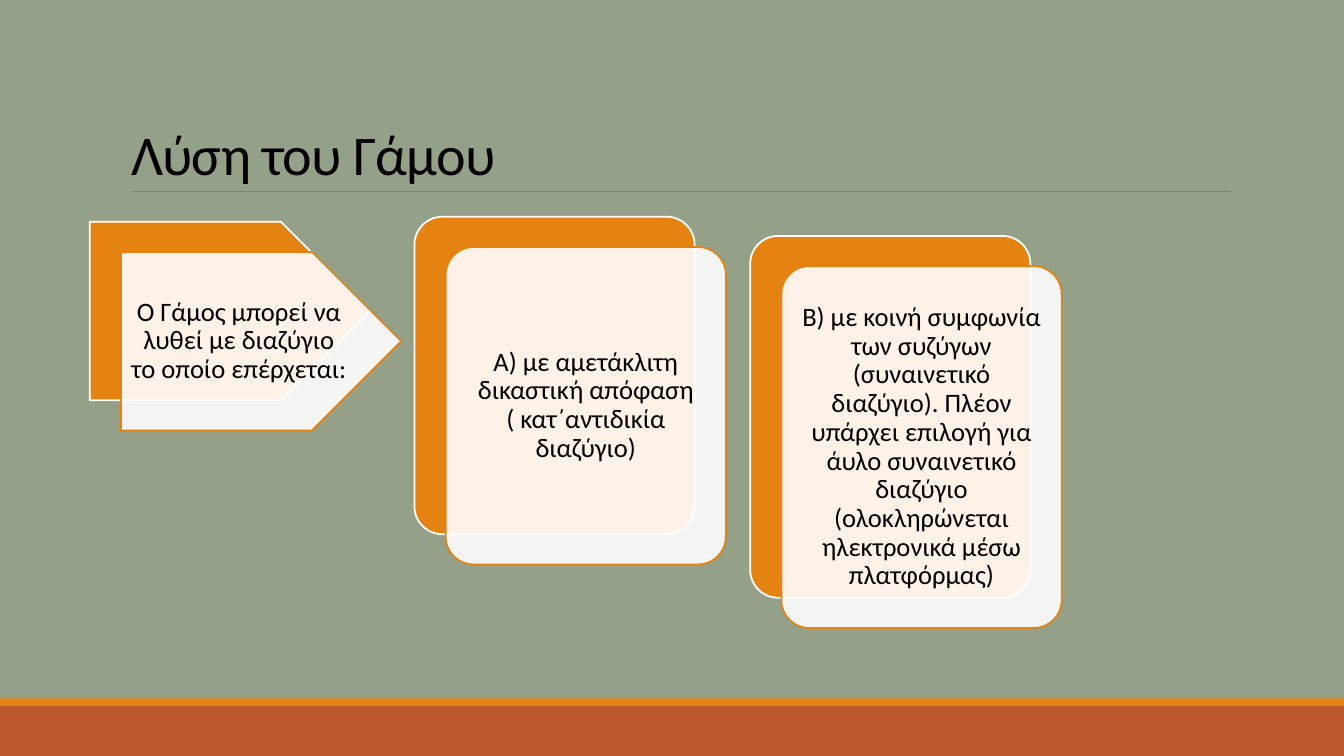
from lxml import etree
from pptx import Presentation
from pptx.dml.color import RGBColor
from pptx.enum.shapes import MSO_CONNECTOR, MSO_SHAPE
from pptx.enum.text import MSO_ANCHOR, MSO_AUTO_SIZE, PP_ALIGN
from pptx.oxml.ns import qn
from pptx.util import Inches, Pt

ORANGE, RUST, SAGE = "E48312", "BD582C", "94A088"
WHITE, BLACK, GRAY = "FFFFFF", "000000", "808080"
CARD_WIDTH, OFFSET = 2.78, 0.31
CARDS = [
    (MSO_SHAPE.PENTAGON, 0.5, 0.89, 2.2, 1.77,
     "Ο Γάμος μπορεί να λυθεί με διαζύγιο το οποίο επέρχεται:"),
    (MSO_SHAPE.ROUNDED_RECTANGLE, 0.1, 4.11, 2.15, 3.15,
     "Α) με αμετάκλιτη δικαστική απόφαση ( κατ΄αντιδικία διαζύγιο)"),
    (MSO_SHAPE.ROUNDED_RECTANGLE, 0.1, 7.44, 2.34, 3.59,
     "Β) με κοινή συμφωνία των συζύγων (συναινετικό διαζύγιο). Πλέον υπάρχει "
     "επιλογή για άυλο συναινετικό διαζύγιο (ολοκληρώνεται ηλεκτρονικά μέσω "
     "πλατφόρμας)"),
]


def paint(color_format, color):
    color_format.rgb = RGBColor.from_string(color)


def add_block(s, kind, x, y, w, h, fill, line=None):
    sp = s.shapes.add_shape(kind, Inches(x), Inches(y), Inches(w), Inches(h))
    sp.shadow.inherit = False
    sp.fill.solid()
    paint(sp.fill.fore_color, fill)
    if line:
        paint(sp.line.color, line)
        sp.line.width = Pt(1.25)
    else:
        sp.line.fill.background()
    return sp


def set_opacity(sp, percent):
    color = sp.fill._xPr.find(qn("a:solidFill"))[0]
    etree.SubElement(color, qn("a:alpha"), val=str(percent * 1000))


def add_text(tf, text, size, align, spacing):
    tf.word_wrap = True
    tf.auto_size = MSO_AUTO_SIZE.NONE
    p = tf.paragraphs[0]
    p.alignment = align
    p.line_spacing = spacing
    r = p.add_run()
    r.text = text
    r.font.name = "Calibri"
    r.font.size = Pt(size)
    paint(r.font.color, BLACK)
    return r


def add_title(s, text):
    title = s.shapes.title
    title.left, title.top = Inches(1.2), Inches(0.31)
    title.width, title.height = Inches(11), Inches(1.59)
    tf = title.text_frame
    tf.vertical_anchor = MSO_ANCHOR.BOTTOM
    r = add_text(tf, text, 40, PP_ALIGN.LEFT, 0.85)
    r.font._element.set("spc", "-50")


def add_rule(s, x1, x2, y):
    rule = s.shapes.add_connector(
        MSO_CONNECTOR.STRAIGHT, Inches(x1), Inches(y), Inches(x2), Inches(y))
    paint(rule.line.color, GRAY)
    rule.line.width = Pt(0.5)
    etree.SubElement(rule._element.spPr, qn("a:effectLst"))


def add_card(s, kind, adjustment, x, y, h, text):
    back = add_block(s, kind, x, y, CARD_WIDTH, h, ORANGE, WHITE)
    front = add_block(s, kind, x + OFFSET, y + 0.3, CARD_WIDTH, h, WHITE, ORANGE)
    for sp in (back, front):
        sp.adjustments[0] = adjustment
    set_opacity(front, 90)
    tf = front.text_frame
    tf.margin_left = tf.margin_right = Inches(0.08)
    tf.margin_top = tf.margin_bottom = Inches(0.08)
    tf.vertical_anchor = MSO_ANCHOR.MIDDLE
    add_text(tf, text, 19, PP_ALIGN.CENTER, 0.9)


def main():
    prs = Presentation()
    prs.slide_width, prs.slide_height = Inches(13.33), Inches(7.5)
    s = prs.slides.add_slide(prs.slide_layouts[5])
    s.background.fill.solid()
    paint(s.background.fill.fore_color, SAGE)
    add_block(s, MSO_SHAPE.RECTANGLE, 0, 7, 13.33, 0.5, RUST)
    add_block(s, MSO_SHAPE.RECTANGLE, 0, 6.93, 13.33, 0.07, ORANGE)
    add_rule(s, 1.31, 12.21, 1.9)
    add_title(s, "Λύση του Γάμου")
    for card in CARDS:
        add_card(s, *card)
    prs.save("out.pptx")


if __name__ == "__main__":
    main()
